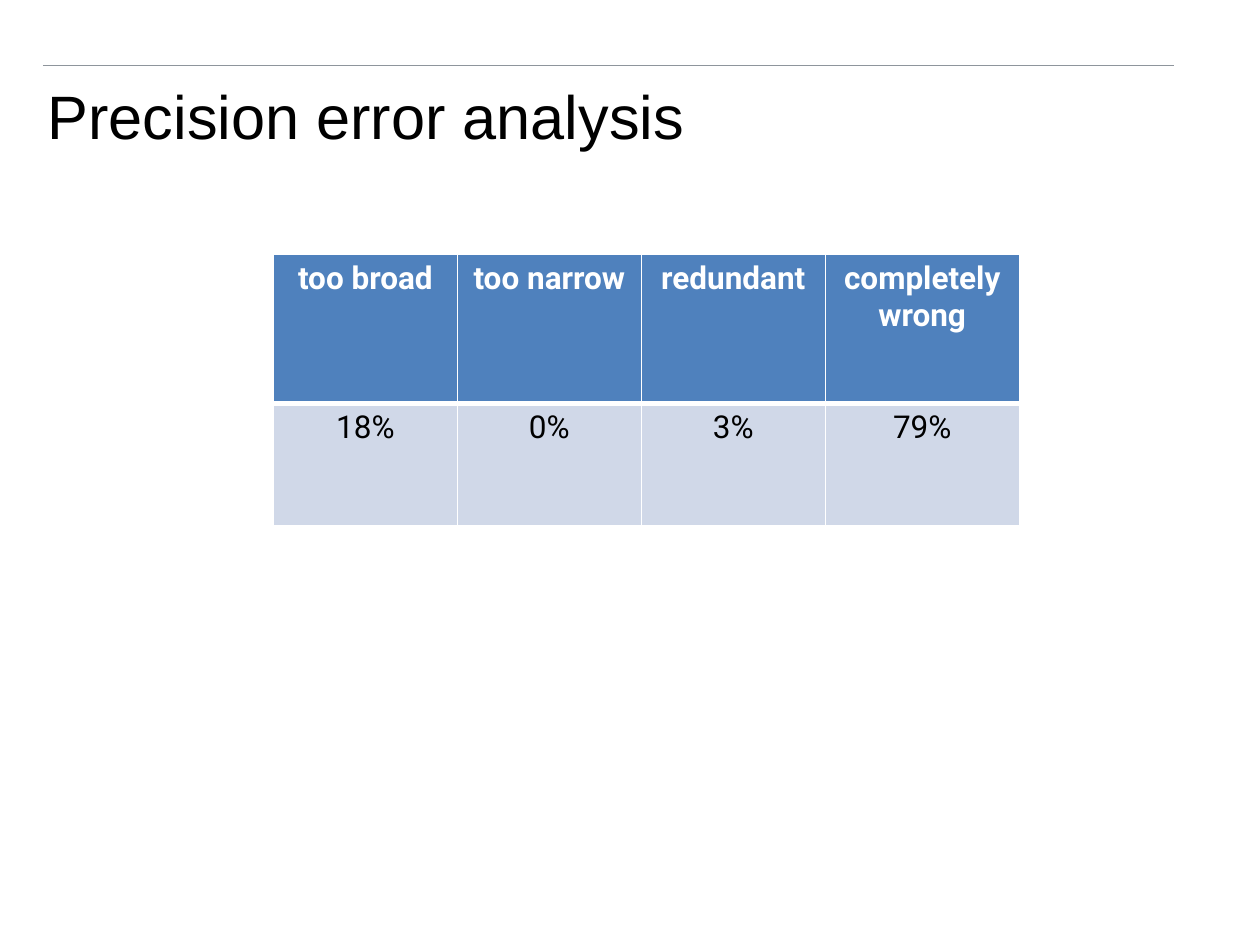
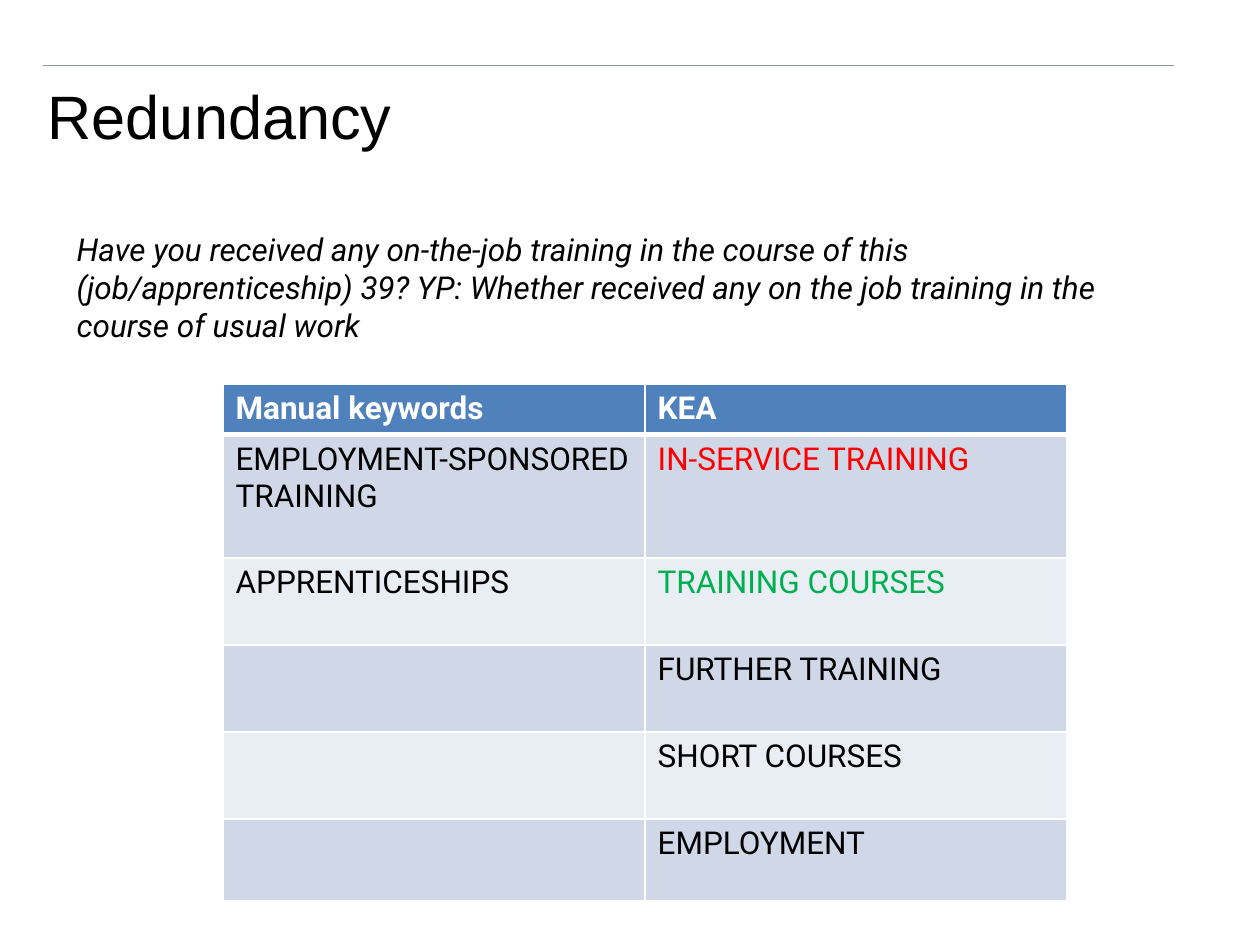
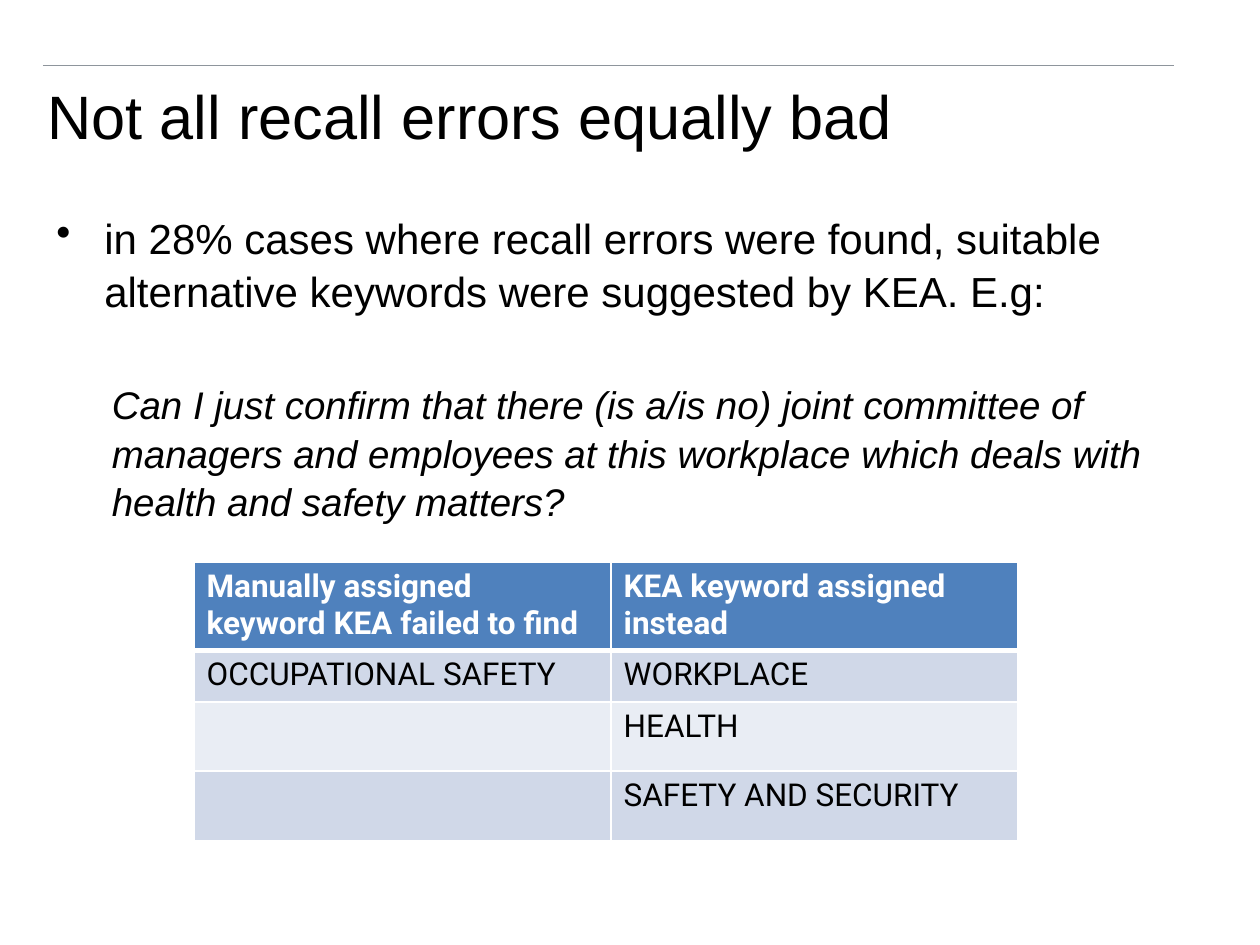
from lxml import etree
from pptx import Presentation
from pptx.dml.color import RGBColor
from pptx.enum.shapes import MSO_CONNECTOR
from pptx.enum.text import MSO_ANCHOR, PP_ALIGN
from pptx.oxml.ns import qn
from pptx.util import Inches, Pt

LINE = MSO_CONNECTOR.STRAIGHT
MIDDLE = MSO_ANCHOR.MIDDLE
LEFT, CENTER = PP_ALIGN.LEFT, PP_ALIGN.CENTER

BLACK, WHITE, RULE = "000000", "FFFFFF", "8E959C"
HEAD, BANDS = "4F81BD", ("D0D8E8", "E9EDF4")

TITLE = {"name": "Arial", "size": 35}
BODY = {"name": "Arial", "size": 24}
QUOTE = {"name": "Arial", "size": 22, "italic": True}
NOTE = {"name": "Roboto", "size": 18, "italic": True}
CELL = {"name": "Roboto", "size": 18, "bold": False}
TOP = {"name": "Roboto", "size": 18, "bold": True, "color": WHITE}

SLIDES = [
    {
        "title": "Precision error analysis",
        "table": {
            "at": (2.17, 2.02), "align": CENTER,
            "cols": [1.46, 1.46, 1.46, 1.54], "rows": [1.18, 0.97],
            "cells": [["too broad", "too narrow", "redundant", "completely wrong"],
                      ["18%", "0%", "3%", "79%"]],
        },
    },
    {
        "title": "Redundancy",
        "table": {
            "at": (1.77, 3.05), "align": LEFT,
            "cols": [3.35] * 2, "rows": [0.38, 0.98] + [0.69] * 3 + [0.65],
            "cells": [["Manual keywords", "KEA"],
                      ["EMPLOYMENT-SPONSORED TRAINING", "IN-SERVICE TRAINING"],
                      ["APPRENTICESHIPS", "TRAINING COURSES"],
                      ["", "FURTHER TRAINING"],
                      ["", "SHORT COURSES"],
                      ["", "EMPLOYMENT"]],
            "colors": {"IN-SERVICE TRAINING": "FF0000", "TRAINING COURSES": "00B050"},
        },
        "text": {
            "at": (0.51, 1.78, 8.35, 1.01),
            "paras": [{"text": "Have you received any on-the-job training in the course "
                               "of this (job/apprenticeship) 39? YP: Whether received any "
                               "on the job training in the course of usual work",
                       "font": NOTE}],
        },
    },
    {
        "title": "Not all recall errors equally bad",
        "text": {
            "at": (0.35, 1.62, 9, 2.7),
            "paras": [{"text": "in 28% cases where recall errors were found, suitable "
                               "alternative keywords were suggested by KEA. E.g:",
                       "font": BODY, "indent": (0.38, -0.38), "bullet": "•",
                       "pitch": 1.05},
                      {"text": "Can I just confirm that there (is a/is no) joint committee "
                               "of managers and employees at this workplace which deals "
                               "with health and safety matters?",
                       "font": QUOTE, "indent": (0.44, 0), "before": 36,
                       "pitch": 1.05}],
        },
        "table": {
            "at": (1.54, 4.46), "align": LEFT,
            "cols": [3.31, 3.23], "rows": [0.68, 0.41, 0.55, 0.55],
            "cells": [["Manually assigned keyword KEA failed to find",
                       "KEA keyword assigned instead"],
                      ["OCCUPATIONAL SAFETY", "WORKPLACE"],
                      ["", "HEALTH"],
                      ["", "SAFETY AND SECURITY"]],
        },
    },
]


def rgb(code):
    return RGBColor.from_string(code)


def style(font, form):
    for key, val in {"color": BLACK, **form}.items():
        if key == "color":
            font.color.rgb = rgb(val)
        else:
            setattr(font, key, Pt(val) if key == "size" else val)


def fill_para(para, item):
    para.text = item["text"]
    if "pitch" in item:
        para.line_spacing = item["pitch"]
    if "before" in item:
        para.space_before = Pt(item["before"])
    if "indent" in item:
        props = para._p.get_or_add_pPr()
        for key, val in zip(("marL", "indent"), item["indent"]):
            props.set(key, str(Inches(val)))
        if "bullet" in item:
            etree.SubElement(props, qn("a:buChar")).set("char", item["bullet"])
    style(para.runs[0].font, item["font"])


def add_text(slide, at, paras, anchor=None):
    frame = slide.shapes.add_textbox(*map(Inches, at)).text_frame
    frame.word_wrap = True
    frame.vertical_anchor = anchor
    for n, item in enumerate(paras):
        fill_para(frame.add_paragraph() if n else frame.paragraphs[0], item)


def add_rule(slide):
    rule = slide.shapes.add_connector(LINE, *map(Inches, (0.34, 0.52, 9.32, 0.52)))
    rule.line.color.rgb = rgb(RULE)
    rule.line.width = Pt(0.75)
    etree.SubElement(rule._element.spPr, qn("a:effectLst"))


def edge(cell, row):
    """Draw white cell borders, thick between the header and the body."""
    props = cell._tc.get_or_add_tcPr()
    thick = {"lnB": row == 0, "lnT": row == 1}
    for side in ("lnL", "lnR", "lnT", "lnB"):
        width = Pt(3 if thick.get(side) else 1)
        line = etree.SubElement(props, qn("a:" + side), w=str(width))
        solid = etree.SubElement(line, qn("a:solidFill"))
        etree.SubElement(solid, qn("a:srgbClr"), val=WHITE)


def add_grid(slide, at, align, cols, rows, cells, colors=None):
    size = sum(cols), sum(rows)
    table = slide.shapes.add_table(len(rows), len(cols), *map(Inches, at + size)).table
    for col, width in zip(table.columns, cols):
        col.width = Inches(width)
    for r, (height, texts) in enumerate(zip(rows, cells)):
        table.rows[r].height = Inches(height)
        for c, text in enumerate(texts):
            cell = table.cell(r, c)
            edge(cell, r)
            cell.fill.solid()
            cell.fill.fore_color.rgb = rgb(BANDS[(r - 1) % 2] if r else HEAD)
            if text:
                tint = (colors or {}).get(text, BLACK)
                form = {**CELL, "color": tint} if r else TOP
                para = cell.text_frame.paragraphs[0]
                para.alignment = align
                fill_para(para, {"text": text, "font": form})


def main():
    deck = Presentation()
    deck.slide_width, deck.slide_height = Inches(10), Inches(7.5)
    for item in SLIDES:
        slide = deck.slides.add_slide(deck.slide_layouts[6])
        add_rule(slide)
        add_text(slide, (0.28, 0.29, 9, 1.25),
                 [{"text": item["title"], "font": TITLE}], MIDDLE)
        if "text" in item:
            add_text(slide, **item["text"])
        add_grid(slide, **item["table"])
    deck.save("out.pptx")


if __name__ == "__main__":
    main()
